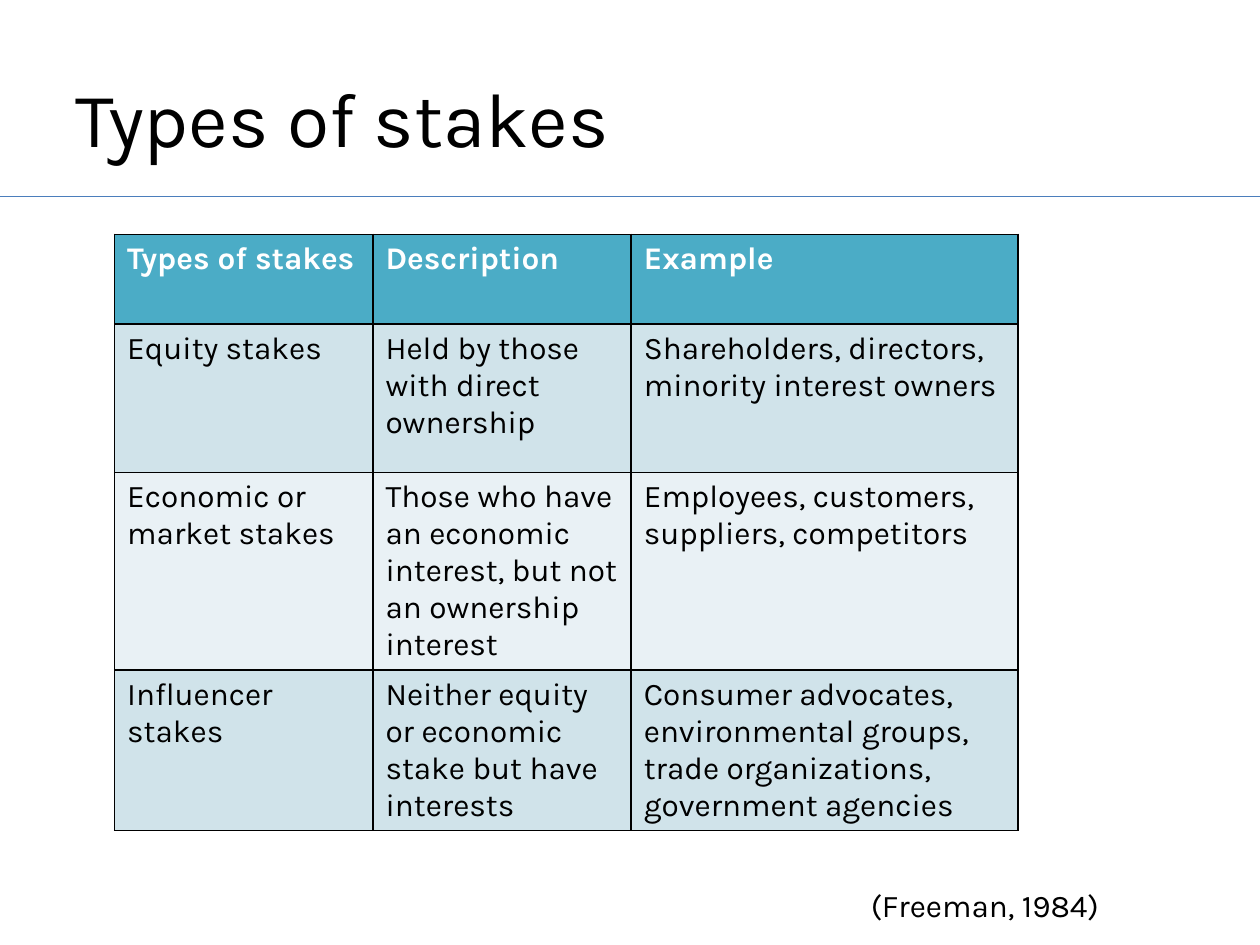
from lxml.etree import SubElement
from pptx import Presentation
from pptx.dml.color import RGBColor as RGB
from pptx.enum.text import MSO_ANCHOR as Anchor, MSO_AUTO_SIZE as Fit, PP_ALIGN as Align
from pptx.oxml.ns import qn
from pptx.util import Pt

COLORS = {"text": "000000", "white": "FFFFFF", "rule": "4B7EBC",
          "head": "4BACC6", "odd": "D0E3EA", "even": "E9F1F5"}
BODY = {"name": "Karla", "size": Pt(18), "bold": False}
HEAD = {**BODY, "bold": True}
TITLE = {**BODY, "size": Pt(44)}
COLS = [147.6, 147.6, 221]
ROWS = [51.1, 85, 78.5, 54.7]
STAKES = [
    ["Types of stakes", "Description", "Example"],
    ["Equity stakes", "Held by those with direct ownership",
     "Shareholders, directors, minority interest owners"],
    ["Economic or market stakes",
     "Those who have an economic interest, but not an ownership interest",
     "Employees, customers, suppliers, competitors"],
    ["Influencer stakes", "Neither equity or economic stake but have interests",
     "Consumer advocates, environmental groups, trade organizations, government agencies"],
]


def color(name):
    """Return the named colour."""
    return RGB.from_string(COLORS[name])


def write(frame, text, style, tone="text"):
    """Set text in a frame with a font style and colour."""
    frame.text = text
    para = frame.paragraphs[0]
    para.alignment = Align.LEFT
    font = para.runs[0].font
    for key, value in style.items():
        setattr(font, key, value)
    font.color.rgb = color(tone)


def border(cell):
    """Draw a thin black line on each side of a cell."""
    props = cell._tc.get_or_add_tcPr()
    for place, side in enumerate(("lnL", "lnR", "lnT", "lnB")):
        line = props.makeelement(qn(f"a:{side}"), {"w": str(Pt(1))})
        fill = SubElement(line, qn("a:solidFill"))
        SubElement(fill, qn("a:srgbClr"), val=COLORS["text"])
        props.insert(place, line)


def add_title(slide, left, top, width, height):
    """Place the title and the rule just below its box."""
    title = slide.shapes.title
    title.left, title.top, title.width, title.height = map(Pt, (left, top, width, height))
    title.text_frame.vertical_anchor = Anchor.MIDDLE
    write(title.text_frame, "Types of stakes", TITLE)
    level = Pt(top + height + 0.7)
    rule = slide.shapes.add_connector(1, 0, level, Pt(720), level)
    rule.line.color.rgb = color("rule")
    rule.line.width = Pt(0.75)
    SubElement(rule._element.spPr, qn("a:effectLst"))


def add_grid(slide, left, top):
    """Place the table of stakes."""
    box = map(Pt, (left, top, sum(COLS), sum(ROWS)))
    table = slide.shapes.add_table(len(ROWS), len(COLS), *box).table
    for col, width in zip(table.columns, COLS):
        col.width = Pt(width)
    for num, (row, height) in enumerate(zip(table.rows, ROWS)):
        row.height = Pt(height)
        shade = "head" if num == 0 else "odd" if num % 2 else "even"
        style, tone = (BODY, "text") if num else (HEAD, "white")
        for cell, text in zip(row.cells, STAKES[num]):
            write(cell.text_frame, text, style, tone)
            cell.fill.solid()
            cell.fill.fore_color.rgb = color(shade)
            border(cell)


def add_source(slide, left, top, width, height):
    """Place the citation."""
    frame = slide.shapes.add_textbox(*map(Pt, (left, top, width, height))).text_frame
    frame.word_wrap = True
    frame.auto_size = Fit.SHAPE_TO_FIT_TEXT
    write(frame, "(Freeman, 1984)", BODY)


def main():
    """Build and save the slide."""
    deck = Presentation()
    deck.slide_width, deck.slide_height = Pt(720), Pt(540)
    slide = deck.slides.add_slide(deck.slide_layouts[5])
    add_title(slide, 36, 21.6, 648, 90)
    add_grid(slide, 65.5, 134)
    add_source(slide, 490.5, 502.5, 209.5, 29)
    deck.save("out.pptx")


if __name__ == "__main__":
    main()
